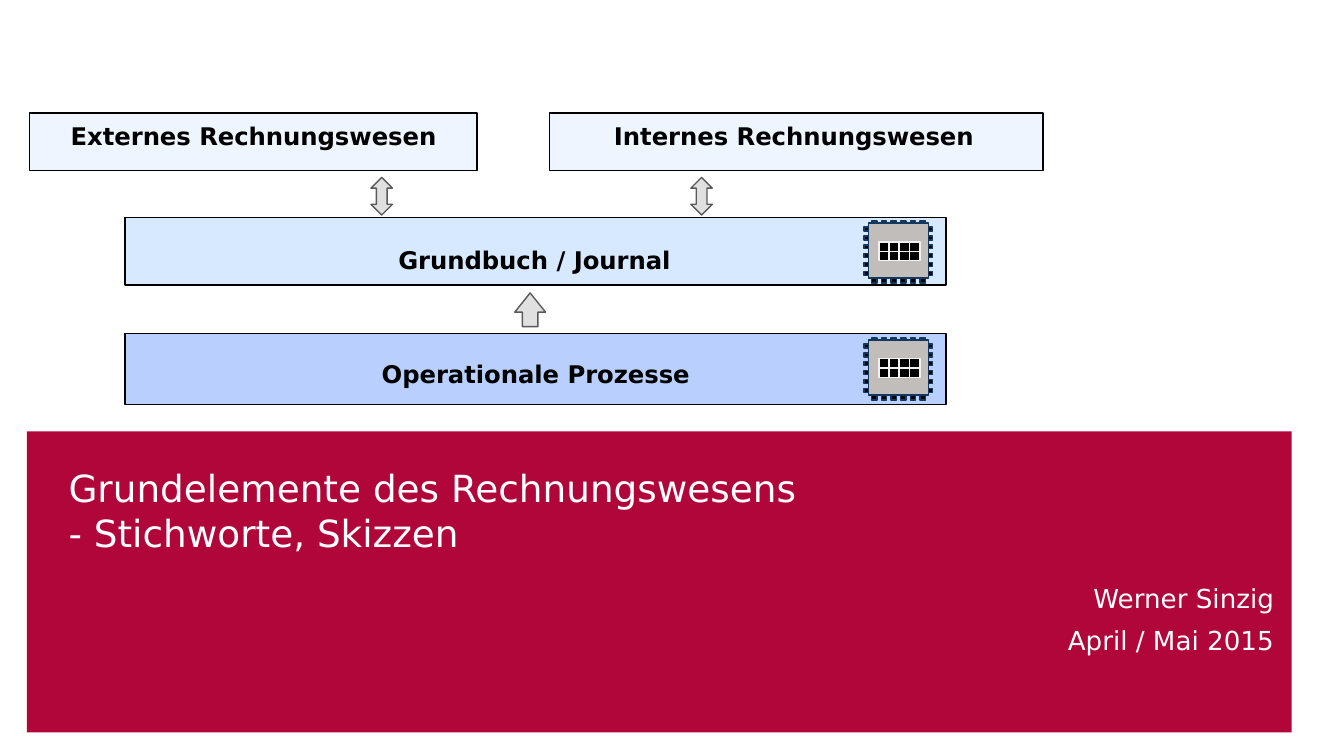
from itertools import product

from lxml.etree import SubElement
from pptx import Presentation
from pptx.dml.color import RGBColor
from pptx.enum.shapes import MSO_SHAPE as SHAPE
from pptx.enum.text import MSO_ANCHOR as ANCHOR, PP_ALIGN as ALIGN
from pptx.oxml.ns import qn
from pptx.util import Inches, Pt

FONT = "DejaVu Sans"
COLORS = {
    "crimson": "B1063A", "white": "FFFFFF", "black": "000000",
    "accounting": "DFECFF", "journal": "B0D5FF", "processes": "75A2FF",
    "arrow": "E0E0E0", "arrow_edge": "595959",
    "chip": "C0BDBA", "chip_edge": "14385D", "cell_edge": "F2F2F2",
}


def color(name):
    return RGBColor.from_string(COLORS[name])


def add_block(slide, box, fill, edge=None, kind=SHAPE.RECTANGLE, rotation=0, opacity=None):
    block = slide.shapes.add_shape(kind, *map(Inches, box))
    block.shadow.inherit = False
    block.rotation = rotation
    block.fill.solid()
    block.fill.fore_color.rgb = color(fill)
    if opacity is not None:
        tint = block.fill._xPr.find(qn("a:solidFill"))[0]
        SubElement(tint, qn("a:alpha"), val=str(opacity * 1000))
    if edge:
        block.line.color.rgb = color(edge)
        block.line.width = Pt(0.75)
    else:
        block.line.fill.background()
    return block


def add_text(slide, box, lines, size, ink, insets=(0, 0, 0, 0), anchor=ANCHOR.TOP,
             bold=False, **paragraph_format):
    """Write lines as paragraphs; insets run left, top, right, bottom."""
    frame = slide.shapes.add_textbox(*map(Inches, box)).text_frame
    frame.word_wrap = True
    frame.vertical_anchor = anchor
    for side, inset in zip(("left", "top", "right", "bottom"), insets):
        setattr(frame, f"margin_{side}", Inches(inset))
    for number, line in enumerate(lines):
        paragraph = frame.add_paragraph() if number else frame.paragraphs[0]
        paragraph.text = line
        for key, value in paragraph_format.items():
            setattr(paragraph, key, value)
        for run in paragraph.runs:
            font_format = {"name": FONT, "size": Pt(size), "bold": bold}
            for key, value in font_format.items():
                setattr(run.font, key, value)
            run.font.color.rgb = color(ink)


def add_layer(slide, box, fill, label, label_box):
    """Draw one translucent layer of the accounting stack with its label."""
    add_block(slide, box, fill, "black", opacity=50)
    add_text(slide, label_box, [label], 13, "black", insets=(0.1, 0.29, 0.1, 0),
             bold=True, alignment=ALIGN.CENTER)


def add_chip(slide, left, top):
    for dx, row in product((0.43, 0), range(6)):
        add_block(slide, (left + dx, top + 0.05 + row * 0.066, 0.08, 0.03),
                  "black", "chip_edge")
    for dy, column in product((0.02, 0.41), range(6)):
        add_block(slide, (left + 0.04 + column * 0.072, top + dy, 0.07, 0.04),
                  "black", "chip_edge", rotation=270)
    add_block(slide, (left + 0.03, top + 0.02, 0.45, 0.41), "chip", "chip_edge")
    for row, column in product(range(2), range(4)):
        add_block(slide, (left + 0.11 + column * 0.075, top + 0.16 + row * 0.07, 0.08, 0.07),
                  "black", "cell_edge")


def add_accounting_stack(slide, left, top):
    layers = [
        ((3.87, 0, 3.67, 0.43), "accounting", "Internes Rechnungswesen",
         (3.85, -0.19, 3.67, 0.47)),
        ((0, 0, 3.33, 0.43), "accounting", "Externes Rechnungswesen",
         (0, -0.19, 3.33, 0.47)),
        ((0.71, 0.78, 6.11, 0.5), "journal", "Grundbuch / Journal",
         (0.71, 0.73, 6.09, 0.47)),
        ((0.71, 1.64, 6.11, 0.53), "processes", "Operationale Prozesse",
         (0.71, 1.58, 6.11, 0.47)),
    ]

    def place(x, y, width, height):
        return left + x, top + y, width, height

    for box, fill, label, label_box in layers:
        add_layer(slide, place(*box), fill, label, place(*label_box))
    for x in (2.48, 4.86):
        add_block(slide, place(x, 0.54, 0.28, 0.16), "arrow", "arrow_edge",
                  SHAPE.LEFT_RIGHT_ARROW, rotation=90)
    posting = add_block(slide, place(3.6, 1.35, 0.25, 0.23), "arrow", "arrow_edge",
                        SHAPE.RIGHT_ARROW, rotation=270)
    posting.adjustments[1] = 0.62
    for y in (0.8, 1.67):
        add_chip(slide, left + 6.21, top + y)


def add_title_panel(slide, left, top, width, height):
    add_block(slide, (left, top, width, height), "crimson")
    inner = left + 0.19
    add_text(slide, (inner, top - 0.01, width - 0.2, 1.13),
             ["Grundelemente des Rechnungswesens\v- Stichworte, Skizzen"],
             20, "white", insets=(0.12, 0, 0, 0.2), anchor=ANCHOR.BOTTOM)
    add_text(slide, (inner, top + 1.12, width - 0.2, 0.92),
             ["Werner Sinzig", "April / Mai 2015"], 14, "white", insets=(0, 0, 0.12, 0),
             alignment=ALIGN.RIGHT, space_before=Pt(3), space_after=Pt(3))


def main():
    deck = Presentation()
    deck.slide_width = Inches(10)
    deck.slide_height = deck.slide_width * 9 // 16
    slide = deck.slides.add_slide(deck.slide_layouts[6])
    add_title_panel(slide, 0.2, 3.21, 9.41, 2.24)
    add_accounting_stack(slide, 0.22, 0.84)
    deck.save("out.pptx")


if __name__ == "__main__":
    main()
